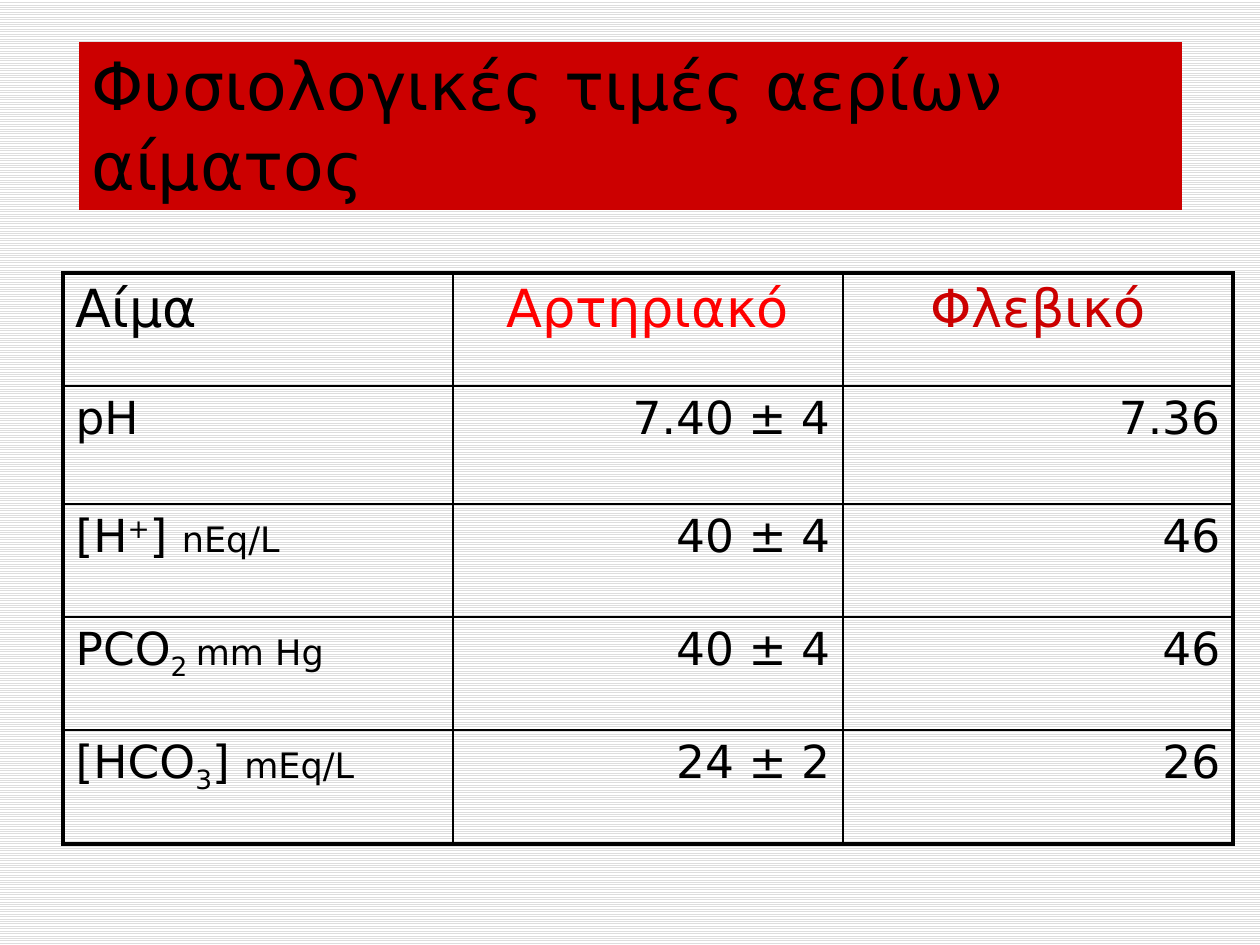
from lxml.etree import SubElement
from pptx import Presentation
from pptx.dml.color import RGBColor
from pptx.enum.dml import MSO_PATTERN
from pptx.enum.shapes import MSO_SHAPE
from pptx.enum.text import MSO_ANCHOR, PP_ALIGN
from pptx.oxml.ns import qn
from pptx.util import Emu, Pt

SCALE = 914400 / 126
LEFT, MID, RIGHT = PP_ALIGN.LEFT, PP_ALIGN.CENTER, PP_ALIGN.RIGHT
THIN, THICK = 1, 2.25


def px(num):
    return Emu(round(num * SCALE))


def color(code):
    return RGBColor.from_string(code)


class Deck:
    font = "DejaVu Sans"
    ink = "000000"

    def __init__(self, wide, high):
        self.prs = Presentation()
        self.prs.slide_width, self.prs.slide_height = px(wide), px(high)
        self.slide = self.prs.slides.add_slide(self.prs.slide_layouts[6])

    def back(self, fore, base):
        fill = self.slide.background.fill
        fill.patterned()
        fill.pattern = MSO_PATTERN.LIGHT_HORIZONTAL
        fill.fore_color.rgb = color(fore)
        fill.back_color.rgb = color(base)

    def label(self, para, runs, align=LEFT, ink=None):
        """Each run is (text, size) or (text, size, baseline percent)."""
        para.alignment = align
        for text, size, *shift in runs:
            run = para.add_run()
            run.text = text
            style = {"name": self.font, "size": Pt(size)}
            for key, val in style.items():
                setattr(run.font, key, val)
            run.font.color.rgb = color(ink or self.ink)
            if shift:
                run._r.get_or_add_rPr().set("baseline", str(shift[0] * 1000))

    def title(self, text, size, box, fill):
        rect = self.slide.shapes.add_shape(MSO_SHAPE.RECTANGLE, *map(px, box))
        rect.shadow.inherit = False
        rect.fill.solid()
        rect.fill.fore_color.rgb = color(fill)
        rect.line.fill.background()
        frame = rect.text_frame
        frame.word_wrap = True
        frame.vertical_anchor = MSO_ANCHOR.BOTTOM
        self.label(frame.paragraphs[0], [(text, size)])

    def edge(self, cell, side, width):
        props = cell._tc.get_or_add_tcPr()
        line = SubElement(props, qn(f"a:ln{side}"), w=str(Pt(width)))
        fill = SubElement(line, qn("a:solidFill"))
        SubElement(fill, qn("a:srgbClr"), val=self.ink)

    def space(self, para, part):
        gap = SubElement(para._p.get_or_add_pPr(), qn("a:spcBef"))
        SubElement(gap, qn("a:spcPct"), val=str(part * 1000))

    def table(self, left, top, cols, rows, data):
        box = map(px, (left, top, sum(cols), sum(rows)))
        grid = self.slide.shapes.add_table(len(rows), len(cols), *box).table
        grid.first_row = grid.horz_banding = False
        for col, wide in zip(grid.columns, cols):
            col.width = px(wide)
        for row, high in zip(grid.rows, rows):
            row.height = px(high)
        for i, line in enumerate(data):
            for j, item in enumerate(line):
                cell = grid.cell(i, j)
                # Thick frame outside, thin rules inside
                outer = {"L": j == 0, "R": j == len(cols) - 1,
                         "T": i == 0, "B": i == len(rows) - 1}
                for side, edge in outer.items():
                    self.edge(cell, side, THICK if edge else THIN)
                cell.fill.background()
                para = cell.text_frame.paragraphs[0]
                self.space(para, 20)
                self.label(para, *item)


def main():
    deck = Deck(1260, 945)
    deck.back("DDDDDD", "FFFFFF")

    # Title band
    deck.title("Φυσιολογικές τιμές αερίων αίματος", 38,
               (79, 42, 1103, 168), "CC0000")

    # Blood gas values: label runs, arterial, venous
    head, body, unit = 30, 26, 20
    gases = [
        ([("pH", body)], "7.40 ± 4", "7.36"),
        ([("[H", body), ("+", body, 30), ("] ", body), ("nEq/L", unit)],
         "40 ± 4", "46"),
        ([("PCO", body), ("2 ", body, -25), ("mm Hg", unit)],
         "40 ± 4", "46"),
        ([("[HCO", body), ("3", body, -25), ("] ", body), ("mEq/L", unit)],
         "24 ± 2", "26"),
    ]
    data = [[([("Αίμα", head)],),
             ([("Αρτηριακό", head)], MID, "FF0000"),
             ([("Φλεβικό", head)], MID, "CC0000")]]
    for name, *vals in gases:
        data.append([(name,)] + [([(val, body)], RIGHT) for val in vals])
    deck.table(63, 273, (390, 390, 390), (113, 118, 113, 113, 114), data)

    deck.prs.save("out.pptx")


if __name__ == "__main__":
    main()
